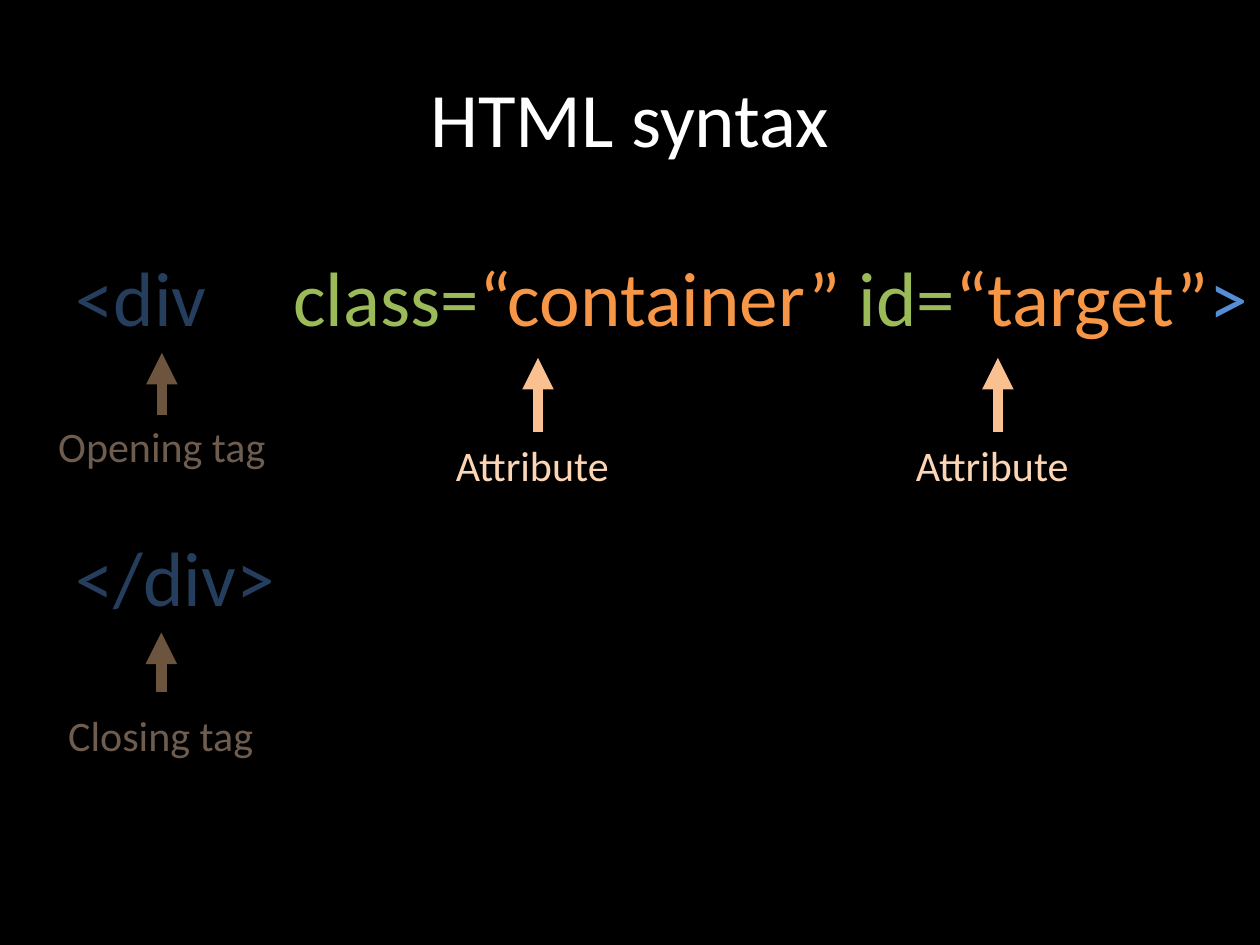
from lxml.etree import SubElement
from pptx import Presentation
from pptx.dml.color import RGBColor
from pptx.enum.shapes import MSO_CONNECTOR, MSO_SHAPE
from pptx.enum.text import MSO_ANCHOR, MSO_AUTO_SIZE, PP_ALIGN
from pptx.oxml.ns import qn
from pptx.util import Inches, Pt

THEME = {
    "font": "Calibri", "big": 44, "small": 24, "arrow": 6,
    "back": "000000", "title": "FFFFFF", "tag": "558ED5", "name": "9BBB59",
    "value": "F79646", "note": "FCD5B5", "line": "FAC090", "veil": 56,
}

TITLE = "HTML syntax"
CODE = [
    [("<div\t", "tag"), ("class=", "name"), ("“container” ", "value"),
     ("id=", "name"), ("“target”", "value"), (">", "tag")],
    [("</div>", "tag")],
]
CODE_TAB = 1.73
CODE_GAP = 107.4

NOTES = [
    {"text": "Opening tag", "box": (0.35, 3.29, 1.87), "x": 1.28, "y": (3.29, 2.8), "join": True},
    {"text": "Closing tag", "box": (0.43, 5.58, 1.69), "x": 1.28, "y": (5.49, 5.02), "join": False},
] + [
    {"text": "Attribute", "box": (left, 3.44, 1.43), "x": left + 0.76, "y": (3.43, 2.84), "join": False}
    for left in (3.51, 7.16)
]
NOTE_HIGH = 0.5
VEIL = (0.24, 1.24, 2.05, 4.99)


def tint(key):
    return RGBColor.from_string(THEME[key])


def add_run(para, text, size, key):
    run = para.add_run()
    run.text = text
    run.font.name = THEME["font"]
    run.font.size = Pt(THEME[size])
    run.font.color.rgb = tint(key)


def add_text(slide, box, paras, size, align=PP_ALIGN.CENTER, wrap=False):
    shape = slide.shapes.add_textbox(*map(Inches, box))
    frame = shape.text_frame
    frame.word_wrap = wrap
    frame.auto_size = MSO_AUTO_SIZE.NONE if wrap else MSO_AUTO_SIZE.SHAPE_TO_FIT_TEXT
    for i, runs in enumerate(paras):
        para = frame.add_paragraph() if i else frame.paragraphs[0]
        para.alignment = align
        for text, key in runs:
            add_run(para, text, size, key)
    return shape


def add_code(slide):
    shape = add_text(slide, (0.5, 1.93, 9.6, 3.06), CODE, "big", PP_ALIGN.LEFT)
    first, last = shape.text_frame.paragraphs
    last.space_before = Pt(CODE_GAP)
    tabs = SubElement(first._p.get_or_add_pPr(), qn("a:tabLst"))
    SubElement(tabs, qn("a:tab"), pos=str(Inches(CODE_TAB)), algn="l")


def add_note(slide, note):
    label = add_text(slide, (*note["box"], NOTE_HIGH), [[(note["text"], "note")]], "small")
    x, (start, end) = note["x"], note["y"]
    arrow = slide.shapes.add_connector(
        MSO_CONNECTOR.STRAIGHT, *map(Inches, (x, start, x, end)))
    if note["join"]:
        arrow.begin_connect(label, 0)
        arrow.end_x = arrow.begin_x
    arrow.line.color.rgb = tint("line")
    arrow.line.width = Pt(THEME["arrow"])
    SubElement(arrow.line._get_or_add_ln(), qn("a:tailEnd"), type="triangle")
    SubElement(arrow._element.spPr, qn("a:effectLst"))


def add_veil(slide):
    veil = slide.shapes.add_shape(MSO_SHAPE.RECTANGLE, *map(Inches, VEIL))
    veil.shadow.inherit = False
    veil.line.fill.background()
    veil.fill.solid()
    veil.fill.fore_color.rgb = tint("back")
    color = veil._element.spPr.find(qn("a:solidFill"))[0]
    SubElement(color, qn("a:alpha"), val=str(THEME["veil"] * 1000))


def main():
    deck = Presentation()
    deck.slide_width, deck.slide_height = Inches(10), Inches(7.5)
    slide = deck.slides.add_slide(deck.slide_layouts[6])
    slide.background.fill.solid()
    slide.background.fill.fore_color.rgb = tint("back")
    title = add_text(slide, (0.5, 0.3, 9, 1.25), [[(TITLE, "title")]], "big", wrap=True)
    title.text_frame.vertical_anchor = MSO_ANCHOR.MIDDLE
    add_code(slide)
    for note in NOTES:
        add_note(slide, note)
    add_veil(slide)
    deck.save("out.pptx")


if __name__ == "__main__":
    main()
